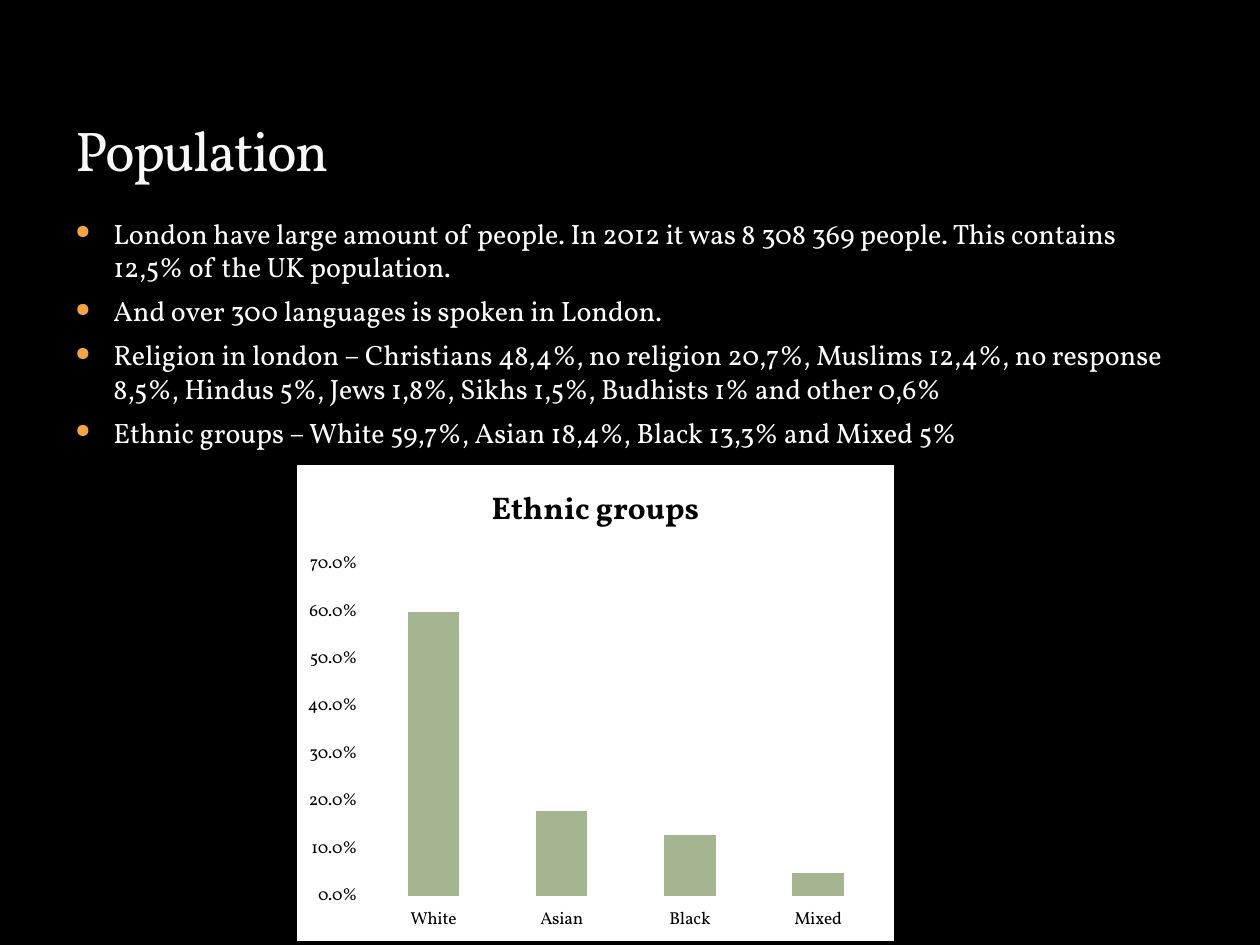
import pptx
import pptx.util
import pptx.chart.data
import pptx.dml.color
import pptx.enum.chart
import pptx.enum.text
import pptx.oxml
import pptx.oxml.ns
import lxml.etree as etree

RGB = pptx.dml.color.RGBColor
BLACK, WHITE = RGB(0, 0, 0), RGB(255, 255, 255)
TITLE_COLOR = RGB(0xF9, 0xF9, 0xF9)
BULLET_COLOR = RGB(0xF3, 0xA4, 0x47)
BAR_COLOR = RGB(0xA5, 0xB5, 0x92)
FONT = "Vollkorn"

# Content
TITLE = "Population"
POINTS = [
    "London have large amount of people. In 2012 it was 8 308 369 people. "
    "This contains 12,5% of the UK population.",
    "And over 300 languages is spoken in London.",
    "Religion in london – Christians 48,4%, no religion 20,7%, Muslims 12,4%, "
    "no response 8,5%, Hindus 5%, Jews 1,8%, Sikhs 1,5%, Budhists 1% and other 0,6%",
    "Ethnic groups – White 59,7%, Asian 18,4%, Black 13,3% and Mixed 5%",
]
CHART_TITLE = "Ethnic groups"
GROUPS = {"White": 0.6, "Asian": 0.18, "Black": 0.13, "Mixed": 0.05}

# Places in px: left, top, width, height
TITLE_BOX = (63, 21, 1134, 168)
BODY_BOX = (63, 210, 1134, 630)
CHART_BOX = (293, 462, 605, 483)
PLOT_BOX = (368, 564, 516, 334)
INDENT = 38


def px(value):
    return pptx.util.Emu(round(value * 914400 / 126))


def set_font(font, size, color, bold=False):
    values = {"name": FONT, "size": pptx.util.Pt(size), "bold": bold}
    for name, value in values.items():
        setattr(font, name, value)
    font.color.rgb = color


def add_element(parent, tag, **attributes):
    child = etree.SubElement(parent, pptx.oxml.ns.qn(tag))
    for name, value in attributes.items():
        child.set(name, str(value))
    return child


def add_bullet(para):
    properties = para._p.get_or_add_pPr()
    properties.set("marL", str(px(INDENT)))
    properties.set("indent", str(-px(INDENT)))
    add_element(add_element(properties, "a:buClr"), "a:srgbClr", val=BULLET_COLOR)
    add_element(properties, "a:buSzPct", val=68000)
    add_element(properties, "a:buChar", char="●")


def add_title(page):
    title = page.shapes.title
    for name, value in zip(("left", "top", "width", "height"), TITLE_BOX):
        setattr(title, name, px(value))
    frame = title.text_frame
    frame.text = TITLE
    frame.auto_size = pptx.enum.text.MSO_AUTO_SIZE.NONE
    frame.vertical_anchor = pptx.enum.text.MSO_ANCHOR.BOTTOM
    para = frame.paragraphs[0]
    para.alignment = pptx.enum.text.PP_ALIGN.LEFT
    span = para.runs[0]
    set_font(span.font, 32, TITLE_COLOR)
    span.font._element.set("spc", "-100")


def add_points(page):
    frame = page.shapes.add_textbox(*map(px, BODY_BOX)).text_frame
    frame.word_wrap = True
    for index, point in enumerate(POINTS):
        para = frame.paragraphs[0] if index == 0 else frame.add_paragraph()
        para.space_before = pptx.util.Pt(6 if index else 0)
        add_bullet(para)
        span = para.add_run()
        span.text = point
        set_font(span.font, 16, WHITE)


def add_group_chart(page):
    data = pptx.chart.data.CategoryChartData(number_format="0.0%")
    data.categories = list(GROUPS)
    data.add_series(CHART_TITLE, list(GROUPS.values()))
    kind = pptx.enum.chart.XL_CHART_TYPE.COLUMN_CLUSTERED
    chart = page.shapes.add_chart(kind, *map(px, CHART_BOX), data).chart
    set_font(chart.font, 10, BLACK)
    chart.has_legend = False
    chart.has_title = True
    heading = chart.chart_title.text_frame
    heading.text = CHART_TITLE
    set_font(heading.paragraphs[0].runs[0].font, 18, BLACK, bold=True)

    # Bars and axes
    plot = chart.plots[0]
    plot.vary_by_categories = False
    plot.gap_width = 150
    fill = plot.series[0].format.fill
    fill.solid()
    fill.fore_color.rgb = BAR_COLOR
    scale = chart.value_axis
    scale.minimum_scale, scale.maximum_scale, scale.major_unit = 0, 0.7, 0.1
    scale.tick_labels.number_format = "0.0%"
    scale.tick_labels.number_format_is_linked = False
    scale.major_gridlines.format.line.color.rgb = WHITE
    for axis in (scale, chart.category_axis):
        axis.major_tick_mark = pptx.enum.chart.XL_TICK_MARK.CROSS
        axis.minor_tick_mark = pptx.enum.chart.XL_TICK_MARK.CROSS
        axis.format.line.fill.background()

    # Inner plot area as shares of the chart
    area = chart._chartSpace.chart.plotArea
    for old in area.findall(pptx.oxml.ns.qn("c:layout")):
        area.remove(old)
    layout = add_element(area, "c:layout")
    area.insert(0, layout)
    manual = add_element(layout, "c:manualLayout")
    left, top, width, height = CHART_BOX
    x, y, w, h = PLOT_BOX
    add_element(manual, "c:layoutTarget", val="inner")
    for name in ("xMode", "yMode"):
        add_element(manual, "c:" + name, val="edge")
    shares = {"x": (x - left) / width, "y": (y - top) / height,
              "w": w / width, "h": h / height}
    for name, share in shares.items():
        add_element(manual, "c:" + name, val=round(share, 4))

    # White ground with a black border
    ground = pptx.oxml.parse_xml(
        f'<c:spPr {pptx.oxml.ns.nsdecls("c", "a")}>'
        f'<a:solidFill><a:srgbClr val="{WHITE}"/></a:solidFill>'
        f'<a:ln w="{pptx.util.Pt(2)}"><a:solidFill><a:srgbClr val="{BLACK}"/>'
        '</a:solidFill></a:ln></c:spPr>')
    chart._chartSpace.chart.addnext(ground)


def main():
    deck = pptx.Presentation()
    deck.slide_width, deck.slide_height = px(1260), px(945)
    page = deck.slides.add_slide(deck.slide_layouts[5])
    page.background.fill.solid()
    page.background.fill.fore_color.rgb = BLACK
    add_points(page)
    add_title(page)
    add_group_chart(page)
    deck.save("out.pptx")


if __name__ == "__main__":
    main()
